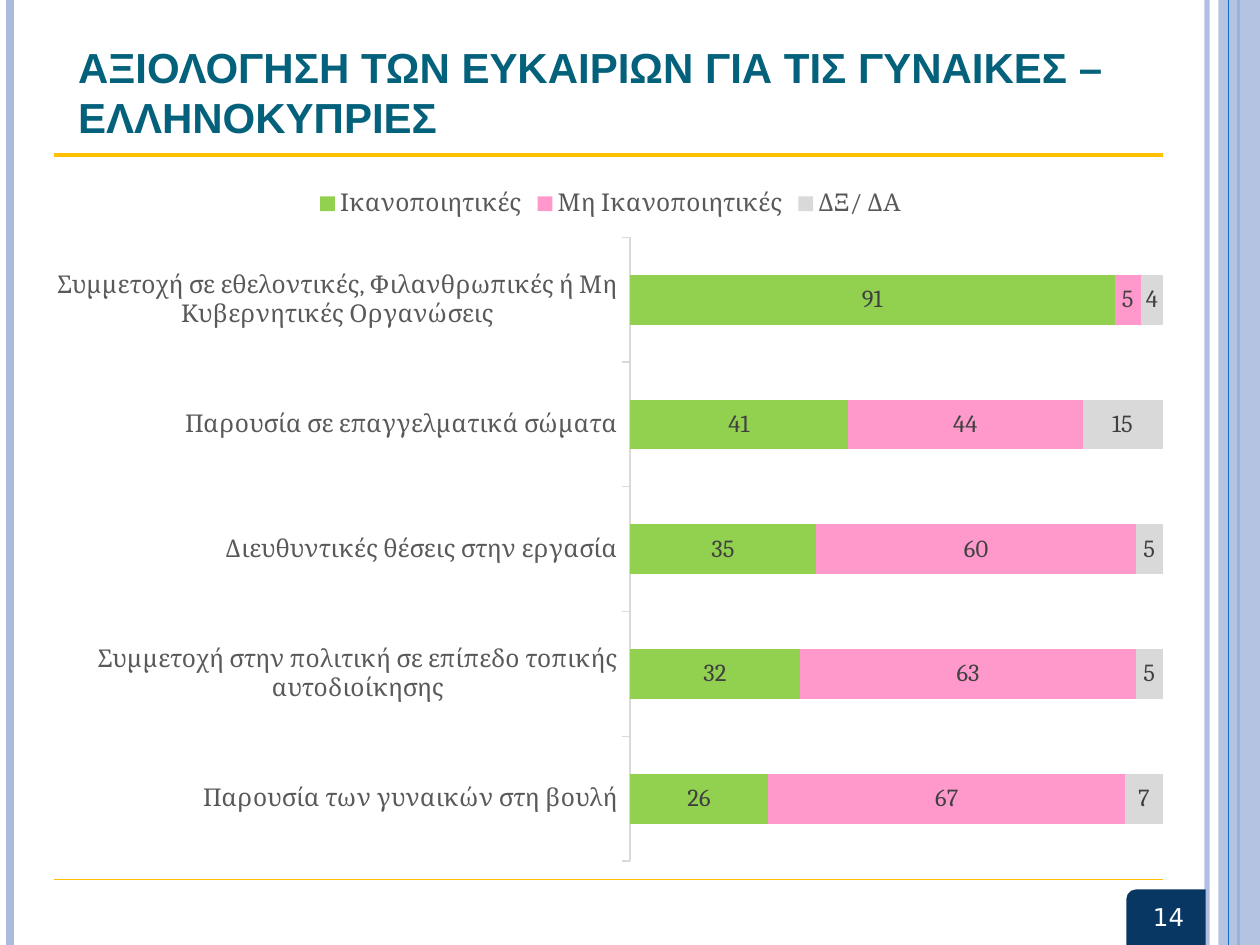
from dataclasses import dataclass

from lxml import etree
from pptx import Presentation
from pptx.chart.data import CategoryChartData
from pptx.dml.color import RGBColor
from pptx.enum.chart import XL_CHART_TYPE, XL_LABEL_POSITION, XL_LEGEND_POSITION, XL_TICK_MARK
from pptx.enum.shapes import MSO_CONNECTOR, MSO_SHAPE
from pptx.enum.text import MSO_ANCHOR, MSO_AUTO_SIZE, PP_ALIGN
from pptx.oxml.ns import qn
from pptx.util import Inches, Pt

STACKED_BAR = XL_CHART_TYPE.BAR_STACKED_100
STRAIGHT = MSO_CONNECTOR.STRAIGHT
TITLE_ONLY = 5
WIDTH, HEIGHT = 10, 7.5


@dataclass(frozen=True)
class Theme:
    title: str = "04617B"
    band: str = "ABBBDF"
    blue: str = "0F6FC6"
    navy: str = "083763"
    rule: str = "FFC000"
    white: str = "FFFFFF"
    axis_line: str = "D9D9D9"
    axis_text: str = "595959"
    label_text: str = "404040"
    title_font: str = "Arial"
    chart_font: str = "Cambria"
    number_font: str = "DejaVu Sans"
    title_size: int = 24
    text_size: int = 14


THEME = Theme()

CATEGORIES = [
    "Παρουσία των γυναικών στη βουλή",
    "Συμμετοχή στην πολιτική σε επίπεδο τοπικής αυτοδιοίκησης",
    "Διευθυντικές θέσεις στην εργασία",
    "Παρουσία σε επαγγελματικά σώματα",
    "Συμμετοχή σε εθελοντικές, Φιλανθρωπικές ή Μη Κυβερνητικές Οργανώσεις",
]
SERIES = [
    ("Ικανοποιητικές", [26, 32, 35, 41, 91], "92D050"),
    ("Μη Ικανοποιητικές", [67, 63, 60, 44, 5], "FF99CC"),
    ("ΔΞ/ ΔΑ", [7, 5, 5, 15, 4], "D9D9D9"),
]


def rgb(value):
    return RGBColor.from_string(value)


def set_font(font, name, size, color, bold=False):
    font.name = name
    font.size = Pt(size)
    font.bold = bold
    font.color.rgb = rgb(color)


def set_opacity(shape, percent):
    """Apply opacity to the first colour of a shape: its fill, or a line's stroke."""
    color = shape._element.spPr.find(".//" + qn("a:srgbClr"))
    etree.SubElement(color, qn("a:alpha")).set("val", str(percent * 1000))


def add_line(page, start, end, color, width):
    line = page.shapes.add_connector(STRAIGHT, *map(Inches, start + end))
    line.line.color.rgb = rgb(color)
    line.line.width = Pt(width)
    etree.SubElement(line._element.spPr, qn("a:effectLst"))
    return line


def add_vertical(page, x, color, width):
    return add_line(page, (x, 0), (x, HEIGHT), color, width)


def add_rule(page, y, width):
    return add_line(page, (0.43, y), (9.23, y), THEME.rule, width)


def add_block(page, kind, box, color):
    block = page.shapes.add_shape(kind, *map(Inches, box))
    block.shadow.inherit = False
    block.fill.solid()
    block.fill.fore_color.rgb = rgb(color)
    block.line.fill.background()
    return block


def add_frame(page):
    set_opacity(add_vertical(page, 9.58, THEME.band, 3), 93)
    add_vertical(page, 0.08, THEME.band, 4.5)
    add_vertical(page, 9.83, THEME.blue, 1.5)
    band = add_block(page, MSO_SHAPE.RECTANGLE, (9.67, 0, 0.33, HEIGHT), THEME.band)
    set_opacity(band, 87)
    add_vertical(page, 9.75, THEME.blue, 0.75)
    tab = add_block(page, MSO_SHAPE.ROUND_1_RECTANGLE, (8.94, 7.06, 0.63, 0.44), THEME.navy)
    tab._element.spPr.find(qn("a:xfrm")).set("flipH", "1")


def set_title(page, text):
    title = page.shapes.title
    title.left, title.top, title.width, title.height = map(Inches, (0.52, 0.6, 8.74, 0.58))
    frame = title.text_frame
    frame.text = text
    frame.auto_size = MSO_AUTO_SIZE.NONE
    frame.vertical_anchor = MSO_ANCHOR.BOTTOM
    para = frame.paragraphs[0]
    para.alignment = PP_ALIGN.LEFT
    set_font(para.font, THEME.title_font, THEME.title_size, THEME.title, bold=True)


def add_page_number(page, number):
    box = page.shapes.add_textbox(*map(Inches, (8.94, 6.94, 0.67, 0.67)))
    frame = box.text_frame
    frame.word_wrap = True
    frame.vertical_anchor = MSO_ANCHOR.MIDDLE
    para = frame.paragraphs[0]
    para.text = number
    para.alignment = PP_ALIGN.CENTER
    set_font(para.font, THEME.number_font, THEME.text_size, THEME.white)


def place_plot(chart, x, y, w, h):
    """Fix the inner plot area, in fractions of the chart."""
    plot_area = chart._chartSpace.find(".//" + qn("c:plotArea"))
    for old in plot_area.findall(qn("c:layout")):
        plot_area.remove(old)
    layout = etree.Element(qn("c:layout"))
    manual = etree.SubElement(layout, qn("c:manualLayout"))
    settings = {"layoutTarget": "inner", "xMode": "edge", "yMode": "edge",
                "x": x, "y": y, "w": w, "h": h}
    for tag, value in settings.items():
        etree.SubElement(manual, qn("c:" + tag)).set("val", str(value))
    plot_area.insert(0, layout)


def style_axes(chart):
    values = chart.value_axis
    values.minimum_scale, values.maximum_scale, values.major_unit = 0, 1, 1
    values.has_major_gridlines = False
    values.visible = False
    axis = chart.category_axis
    axis.major_tick_mark = XL_TICK_MARK.OUTSIDE
    axis.format.line.color.rgb = rgb(THEME.axis_line)
    axis.format.line.width = Pt(0.75)
    set_font(axis.tick_labels.font, THEME.chart_font, THEME.text_size, THEME.axis_text)


def style_series(series, color):
    series.format.fill.solid()
    series.format.fill.fore_color.rgb = rgb(color)
    labels = series.data_labels
    labels.show_value = True
    labels.position = XL_LABEL_POSITION.CENTER
    labels.number_format = "0"
    labels.number_format_is_linked = False
    set_font(labels.font, THEME.chart_font, THEME.text_size, THEME.label_text)


def add_opinion_chart(page):
    data = CategoryChartData(number_format="0")
    data.categories = CATEGORIES
    for name, values, _ in SERIES:
        data.add_series(name, values)
    area = map(Inches, (0.28, 1.39, 9.13, 5.55))
    chart = page.shapes.add_chart(STACKED_BAR, *area, data).chart
    set_font(chart.font, THEME.chart_font, THEME.text_size, THEME.axis_text)
    chart.has_title = False
    chart.has_legend = True
    chart.legend.position = XL_LEGEND_POSITION.TOP
    chart.legend.include_in_layout = False
    set_font(chart.legend.font, THEME.chart_font, THEME.text_size, THEME.axis_text)
    plot = chart.plots[0]
    plot.gap_width, plot.overlap = 150, 100
    plot.vary_by_categories = False
    for series, (_, _, color) in zip(plot.series, SERIES):
        style_series(series, color)
    style_axes(chart)
    place_plot(chart, 0.517, 0.089, 0.463, 0.892)


def main():
    deck = Presentation()
    deck.slide_width, deck.slide_height = Inches(WIDTH), Inches(HEIGHT)
    page = deck.slides.add_slide(deck.slide_layouts[TITLE_ONLY])
    add_frame(page)
    set_title(page, "ΑΞΙΟΛΟΓΗΣΗ ΤΩΝ ΕΥΚΑΙΡΙΩΝ ΓΙΑ ΤΙΣ ΓΥΝΑΙΚΕΣ – ΕΛΛΗΝΟΚΥΠΡΙΕΣ")
    add_page_number(page, "14")
    add_rule(page, 1.23, 2.25)
    add_rule(page, 6.98, 1)
    add_opinion_chart(page)
    deck.save("out.pptx")


if __name__ == "__main__":
    main()
